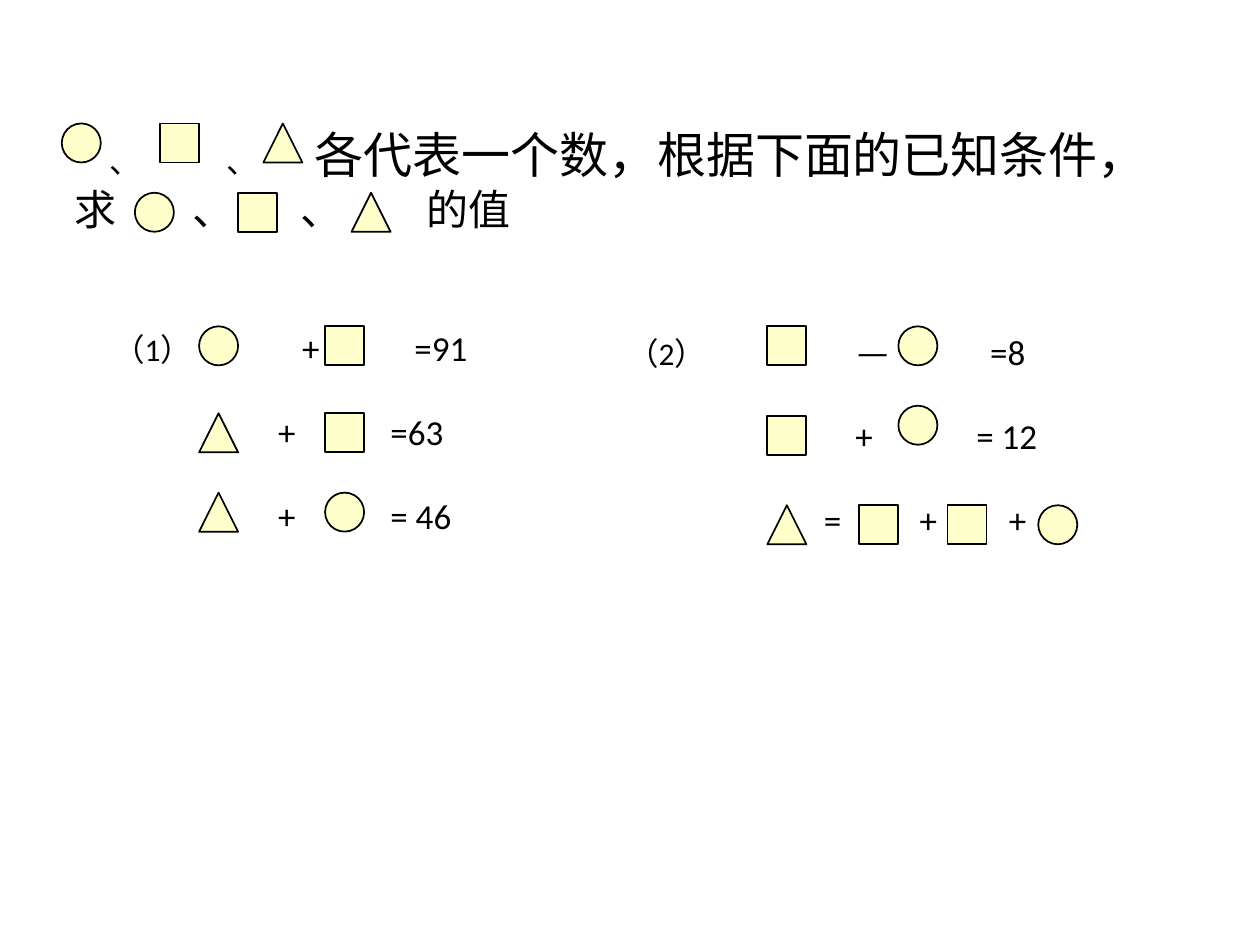
from lxml import etree
from pptx import Presentation
from pptx.dml.color import RGBColor
from pptx.enum.shapes import MSO_SHAPE
from pptx.enum.text import MSO_AUTO_SIZE
from pptx.oxml.ns import qn
from pptx.util import Inches, Pt

CIRCLE = MSO_SHAPE.OVAL
SQUARE = MSO_SHAPE.RECTANGLE
TRIANGLE = MSO_SHAPE.ISOSCELES_TRIANGLE
GROW = MSO_AUTO_SIZE.SHAPE_TO_FIT_TEXT

COLORS = {"ink": "000000", "fill": "FFFFCC"}
FONT = "Calibri"
SIDE = 0.31
INSET = 0.1


class Sheet:
    def __init__(self, slide):
        self.slide = slide

    def color(self, name):
        return RGBColor.from_string(COLORS[name])

    def symbol(self, kind, left, top):
        shape = self.slide.shapes.add_shape(
            kind, Inches(left), Inches(top), Inches(SIDE), Inches(SIDE))
        shape.shadow.inherit = False
        shape.fill.solid()
        shape.fill.fore_color.rgb = self.color("fill")
        shape.line.color.rgb = self.color("ink")
        shape.line.width = Pt(1)

    def row(self, top, *items):
        """Place symbols, given as (kind, left), at one height."""
        for kind, left in items:
            self.symbol(kind, left, top)

    def stops(self, para, spots):
        """Set left tab stops, in inches from the text edge."""
        tabs = etree.SubElement(para._p.get_or_add_pPr(), qn("a:tabLst"))
        for spot in spots:
            etree.SubElement(tabs, qn("a:tab"), pos=str(Inches(spot)), algn="l")

    def text(self, left, top, width, height, lines, gap=0):
        """Each line is (slide positions of its tabs, [(text, size), ...])."""
        box = self.slide.shapes.add_textbox(
            Inches(left), Inches(top), Inches(width), Inches(height))
        frame = box.text_frame
        frame.word_wrap = True
        frame.auto_size = GROW
        for i, (spots, parts) in enumerate(lines):
            para = frame.add_paragraph() if i else frame.paragraphs[0]
            para.space_before = Pt(gap if i else 0)
            self.stops(para, [x - left - INSET for x in spots])
            for words, size in parts:
                run = para.add_run()
                run.text = words
                run.font.name = FONT
                run.font.size = Pt(size)
                run.font.color.rgb = self.color("ink")


def main():
    deck = Presentation()
    deck.slide_width, deck.slide_height = Inches(10), Inches(7.5)
    sheet = Sheet(deck.slides.add_slide(deck.slide_layouts[6]))

    # Task
    sheet.text(0.49, 0.94, 8.53, 0.97, [
        ([0.87, 1.8, 2.5],
         [("\t、\t、\t", 18), ("各代表一个数，根据下面的已知条件，", 28)]),
        ([1.53, 2.39, 3.39], [("求\t、\t、\t的值", 24)]),
    ])
    sheet.row(0.98, (CIRCLE, 0.49), (SQUARE, 1.27), (TRIANGLE, 2.09))
    sheet.row(1.53, (CIRCLE, 1.07), (SQUARE, 1.89), (TRIANGLE, 2.79))

    # First set of equations
    sheet.text(0.8, 2.54, 3.71, 1.78, [
        ([2.4, 3.29], [("（1）", 18), ("\t+\t=91", 20)]),
        ([2.21, 3.1], [("\t+\t=63", 20)]),
        ([2.21, 3.1], [("\t+\t= 46", 20)]),
    ], gap=24)
    pairs = [(2.59, CIRCLE, SQUARE), (3.28, TRIANGLE, SQUARE),
             (3.91, TRIANGLE, CIRCLE)]
    for top, first, second in pairs:
        sheet.row(top, (first, 1.58), (second, 2.58))

    # Second set of equations
    sheet.text(4.88, 2.57, 4.14, 1.78, [
        ([6.81, 7.86], [("（2）", 18), ("\t—\t=8", 20)]),
        ([6.79, 7.75], [("\t+\t= 12", 20)]),
        ([6.54, 7.3, 8.01], [("\t=\t+\t+", 20)]),
    ], gap=24)
    sheet.row(2.59, (SQUARE, 6.09), (CIRCLE, 7.13))
    sheet.symbol(SQUARE, 6.09, 3.3)
    sheet.symbol(CIRCLE, 7.13, 3.22)
    sheet.row(4.01, (TRIANGLE, 6.09), (SQUARE, 6.82), (SQUARE, 7.52),
              (CIRCLE, 8.24))

    deck.save("out.pptx")


if __name__ == "__main__":
    main()
